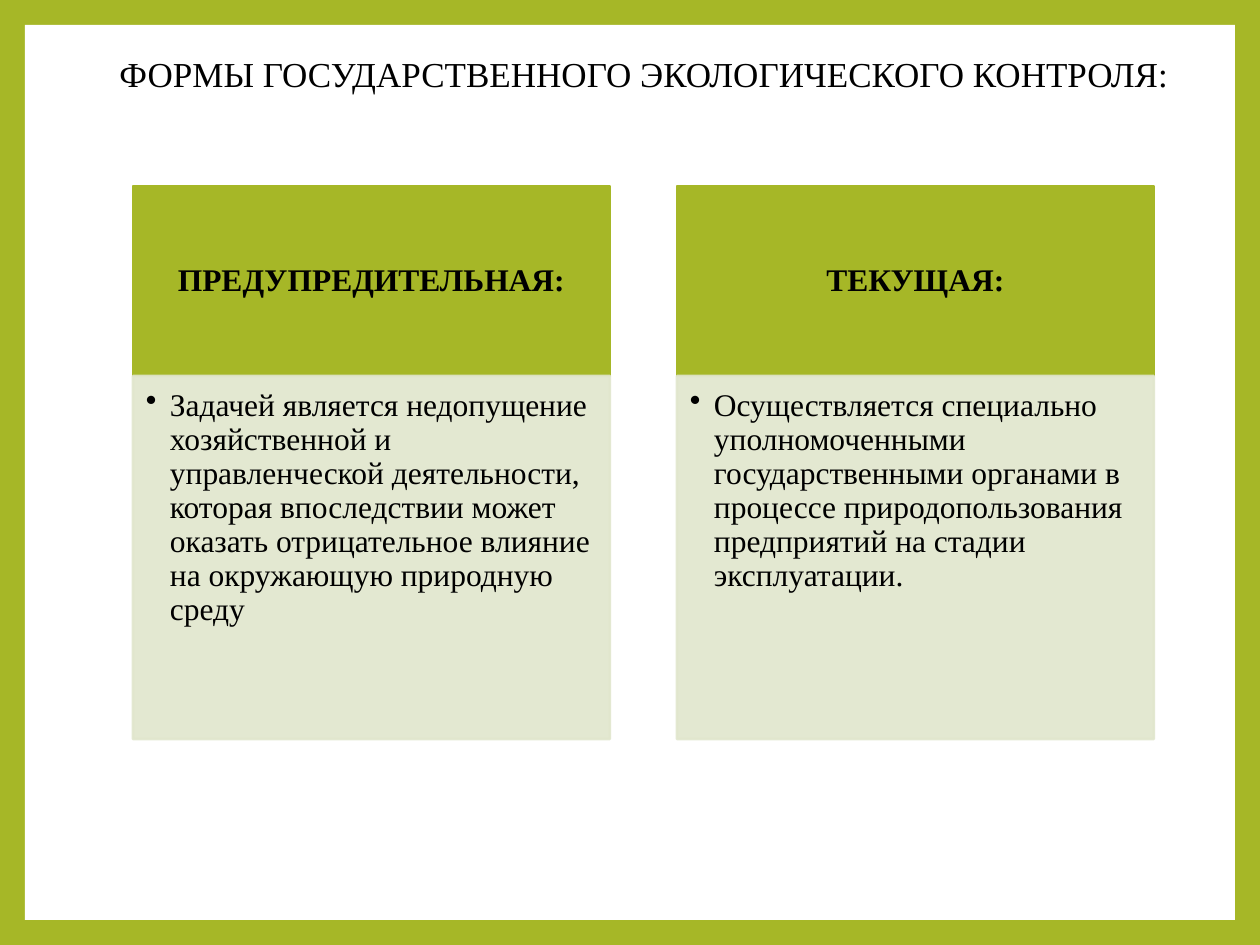
from dataclasses import dataclass

from lxml.etree import SubElement
from pptx import Presentation
from pptx.dml.color import RGBColor
from pptx.enum.shapes import MSO_SHAPE
from pptx.enum.text import MSO_ANCHOR, PP_ALIGN
from pptx.oxml.ns import qn
from pptx.shapes.autoshape import Shape
from pptx.slide import Slide
from pptx.text.text import TextFrame
from pptx.util import Emu, Pt

PX_PER_INCH = 126


@dataclass(frozen=True)
class Theme:
    font: str = "Times New Roman"
    title_size: int = 20
    text_size: int = 18
    line_width: float = 1.5
    line_spacing: float = 0.9
    green: RGBColor = RGBColor(0xA6, 0xB7, 0x27)
    pale: RGBColor = RGBColor(0xE1, 0xE6, 0xCD)
    white: RGBColor = RGBColor(0xFF, 0xFF, 0xFF)
    black: RGBColor = RGBColor(0, 0, 0)
    pale_opacity: int = 90


@dataclass(frozen=True)
class Box:
    left: int
    top: int
    width: int
    height: int


@dataclass(frozen=True)
class ControlForm:
    name: str
    description: str


THEME = Theme()
PAGE = Box(0, 0, 1260, 945)
PANEL = Box(25, 25, 1210, 895)
TITLE = Box(63, 38, 1162, 77)
HEADER = Box(133, 186, 477, 190)
BODY = Box(133, 376, 477, 363)
COLUMN_STEP = 544
BULLET_INDENT = 24
HEADER_INSETS = (18, 10, 18, 10)
BODY_INSETS = (13, 13, 18, 20)

TITLE_TEXT = "ФОРМЫ ГОСУДАРСТВЕННОГО ЭКОЛОГИЧЕСКОГО КОНТРОЛЯ:"
FORMS = [
    ControlForm(
        "ПРЕДУПРЕДИТЕЛЬНАЯ:",
        "Задачей является недопущение хозяйственной и управленческой деятельности, "
        "которая впоследствии может оказать отрицательное влияние на окружающую "
        "природную среду",
    ),
    ControlForm(
        "ТЕКУЩАЯ:",
        "Осуществляется специально уполномоченными государственными органами в "
        "процессе природопользования предприятий на стадии эксплуатации.",
    ),
]


def px(length: int) -> Emu:
    return Emu(round(length * 914400 / PX_PER_INCH))


def add_rectangle(slide: Slide, box: Box, color: RGBColor, outlined: bool = True) -> Shape:
    shape = slide.shapes.add_shape(
        MSO_SHAPE.RECTANGLE, px(box.left), px(box.top), px(box.width), px(box.height)
    )
    shape.shadow.inherit = False
    shape.fill.solid()
    shape.fill.fore_color.rgb = color
    if outlined:
        shape.line.color.rgb = color
        shape.line.width = Pt(THEME.line_width)
    else:
        shape.line.fill.background()
    return shape


def set_opacity(shape: Shape, percent: int) -> None:
    """Apply one opacity to both the fill and the outline."""
    for color in shape._element.spPr.iter(qn("a:srgbClr")):
        SubElement(color, qn("a:alpha"), val=str(percent * 1000))


def write_text(frame: TextFrame, text: str, size: int, align: PP_ALIGN,
               anchor: MSO_ANCHOR, bold: bool = False) -> None:
    frame.text = text
    frame.word_wrap = True
    frame.vertical_anchor = anchor
    para = frame.paragraphs[0]
    para.alignment = align
    para.line_spacing = THEME.line_spacing
    font = para.runs[0].font
    font.name = THEME.font
    font.size = Pt(size)
    font.bold = bold
    font.color.rgb = THEME.black


def set_insets(frame: TextFrame, insets: tuple[int, int, int, int]) -> None:
    """Set the left, top, right and bottom insets."""
    frame.margin_left, frame.margin_top, frame.margin_right, frame.margin_bottom = map(px, insets)


def add_bullet(frame: TextFrame) -> None:
    properties = frame.paragraphs[0]._p.get_or_add_pPr()
    properties.set("marL", str(px(BULLET_INDENT)))
    properties.set("indent", str(-px(BULLET_INDENT)))
    SubElement(properties, qn("a:buChar"), char="•")


def shift(box: Box, column: int) -> Box:
    return Box(box.left + column * COLUMN_STEP, box.top, box.width, box.height)


def add_form(slide: Slide, form: ControlForm, column: int) -> None:
    header = add_rectangle(slide, shift(HEADER, column), THEME.green)
    write_text(header.text_frame, form.name, THEME.text_size,
               PP_ALIGN.CENTER, MSO_ANCHOR.MIDDLE, bold=True)
    set_insets(header.text_frame, HEADER_INSETS)

    body = add_rectangle(slide, shift(BODY, column), THEME.pale)
    set_opacity(body, THEME.pale_opacity)
    write_text(body.text_frame, form.description, THEME.text_size,
               PP_ALIGN.LEFT, MSO_ANCHOR.TOP)
    set_insets(body.text_frame, BODY_INSETS)
    add_bullet(body.text_frame)


def add_title(slide: Slide) -> None:
    title = slide.shapes.title
    title.left, title.top = px(TITLE.left), px(TITLE.top)
    title.width, title.height = px(TITLE.width), px(TITLE.height)
    write_text(title.text_frame, TITLE_TEXT, THEME.title_size,
               PP_ALIGN.CENTER, MSO_ANCHOR.MIDDLE)


def add_panel(slide: Slide) -> None:
    """Add the white panel and move it behind the title."""
    panel = add_rectangle(slide, PANEL, THEME.white, outlined=False)
    slide.shapes.title._element.addprevious(panel._element)


def main() -> None:
    deck = Presentation()
    deck.slide_width, deck.slide_height = px(PAGE.width), px(PAGE.height)
    slide = deck.slides.add_slide(deck.slide_layouts.get_by_name("Title Only"))
    slide.background.fill.solid()
    slide.background.fill.fore_color.rgb = THEME.green
    add_panel(slide)
    add_title(slide)
    for column, form in enumerate(FORMS):
        add_form(slide, form, column)
    deck.save("out.pptx")


if __name__ == "__main__":
    main()
